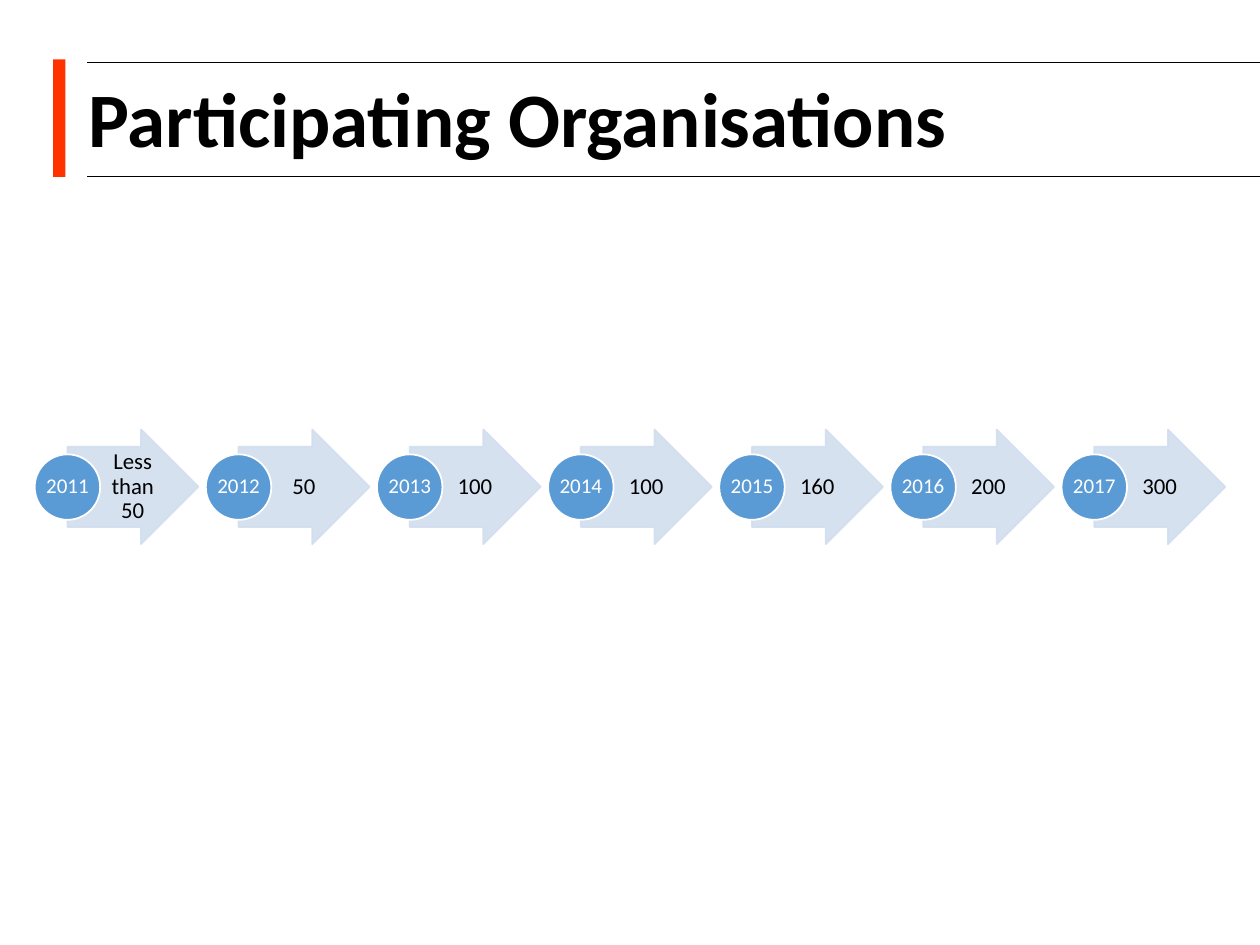
from dataclasses import dataclass

from lxml.etree import SubElement
from pptx import Presentation
from pptx.dml.color import RGBColor
from pptx.enum.shapes import MSO_CONNECTOR as Connector, MSO_SHAPE as Shape
from pptx.enum.text import MSO_ANCHOR as Anchor, MSO_AUTO_SIZE as AutoSize, PP_ALIGN as Align
from pptx.oxml.ns import qn
from pptx.util import Cm, Pt


@dataclass(frozen=True)
class Theme:
    """Colours, font and type sizes of the deck."""
    font: str = "Calibri"
    ink: RGBColor = RGBColor(0, 0, 0)
    paper: RGBColor = RGBColor(255, 255, 255)
    accent: RGBColor = RGBColor(255, 51, 0)
    arrow: RGBColor = RGBColor(210, 222, 239)
    circle: RGBColor = RGBColor(91, 155, 213)
    title_size: int = 44
    value_size: int = 13
    year_size: int = 12


THEME = Theme()
TITLE = "Participating Organisations"
COUNTS = {
    "2011": "Less than 50", "2012": "50", "2013": "100", "2014": "100",
    "2015": "160", "2016": "200", "2017": "300",
}


def place(left, top, width, height):
    """Turn a box in centimetres into slide lengths."""
    return Cm(left), Cm(top), Cm(width), Cm(height)


def write(frame, text, size, color, align, bold=False):
    """Write one styled run into a middle-anchored, wrapping frame."""
    frame.word_wrap = True
    frame.auto_size = AutoSize.NONE
    frame.vertical_anchor = Anchor.MIDDLE
    para = frame.paragraphs[0]
    para.alignment = align
    para.line_spacing = 0.9
    span = para.add_run()
    span.text = text
    font = span.font
    font.name, font.size, font.bold = THEME.font, Pt(size), bold
    font.color.rgb = color


def add_label(shapes, box, text, size, color, insets):
    """Add a centred label with left, top, right and bottom insets."""
    frame = shapes.add_textbox(*place(*box)).text_frame
    (frame.margin_left, frame.margin_top,
     frame.margin_right, frame.margin_bottom) = map(Cm, insets)
    write(frame, text, size, color, Align.CENTER)


def add_filled(shapes, kind, box, fill, outline=None):
    """Add a flat preset shape with an optional one-point outline."""
    shape = shapes.add_shape(kind, *place(*box))
    shape.shadow.inherit = False
    shape.fill.solid()
    shape.fill.fore_color.rgb = fill
    if outline is None:
        shape.line.fill.background()
    else:
        shape.line.color.rgb = outline
        shape.line.width = Pt(1)
    return shape


def add_rule(shapes, left, right, y):
    """Add a thin horizontal rule."""
    rule = shapes.add_connector(Connector.STRAIGHT, Cm(left), Cm(y), Cm(right), Cm(y))
    rule.line.color.rgb = THEME.ink
    rule.line.width = Pt(0.5)
    SubElement(rule._element.spPr, qn("a:effectLst"))


def add_heading(page, left, top, width, height):
    """Place the accent bar, the two rules and the title."""
    add_filled(page.shapes, Shape.RECTANGLE, (left, top, 0.25, height), THEME.accent)
    for y in (top + 0.05, top + height - 0.02):
        add_rule(page.shapes, left + 0.69, left + width, y)
    title = page.shapes.title
    title.left, title.top, title.width, title.height = place(
        left + 0.46, top - 0.56, 21.9, 3.68)
    write(title.text_frame, TITLE, THEME.title_size, THEME.ink, Align.LEFT, bold=True)


def add_step(page, left, top, year, count):
    """Group one arrow and its count with the year circle."""
    shapes = page.shapes.add_group_shape().shapes
    arrow = add_filled(shapes, Shape.RIGHT_ARROW, (left + 0.66, top, 2.64, 2.31),
                       THEME.arrow, THEME.arrow)
    arrow.adjustments[0] = 0.7
    arrow.adjustments[1] = 0.5
    for color in arrow._element.spPr.iter(qn("a:srgbClr")):
        SubElement(color, qn("a:alpha"), val="90000")
    add_label(shapes, (left + 1.31, top + 0.35, 1.28, 1.61), count,
              THEME.value_size, THEME.ink, (0.1, 0.02, 0.05, 0.02))
    add_filled(shapes, Shape.OVAL, (left, top + 0.5, 1.32, 1.32), THEME.circle, THEME.paper)
    add_label(shapes, (left + 0.19, top + 0.69, 0.94, 0.94), year,
              THEME.year_size, THEME.paper, (0.02, 0.02, 0.02, 0.02))


def add_timeline(page, left, top, pitch):
    """Set the yearly steps side by side at an equal pitch."""
    for index, (year, count) in enumerate(COUNTS.items()):
        add_step(page, left + index * pitch, top, year, count)


def main():
    """Build and save the deck."""
    deck = Presentation()
    deck.slide_width, deck.slide_height = Cm(25.4), Cm(19.05)
    page = deck.slides.add_slide(deck.slide_layouts[5])
    add_heading(page, 1.07, 1.2, 24.33, 2.37)
    add_timeline(page, 0.7, 8.66, 3.45)
    deck.save("out.pptx")


if __name__ == "__main__":
    main()
